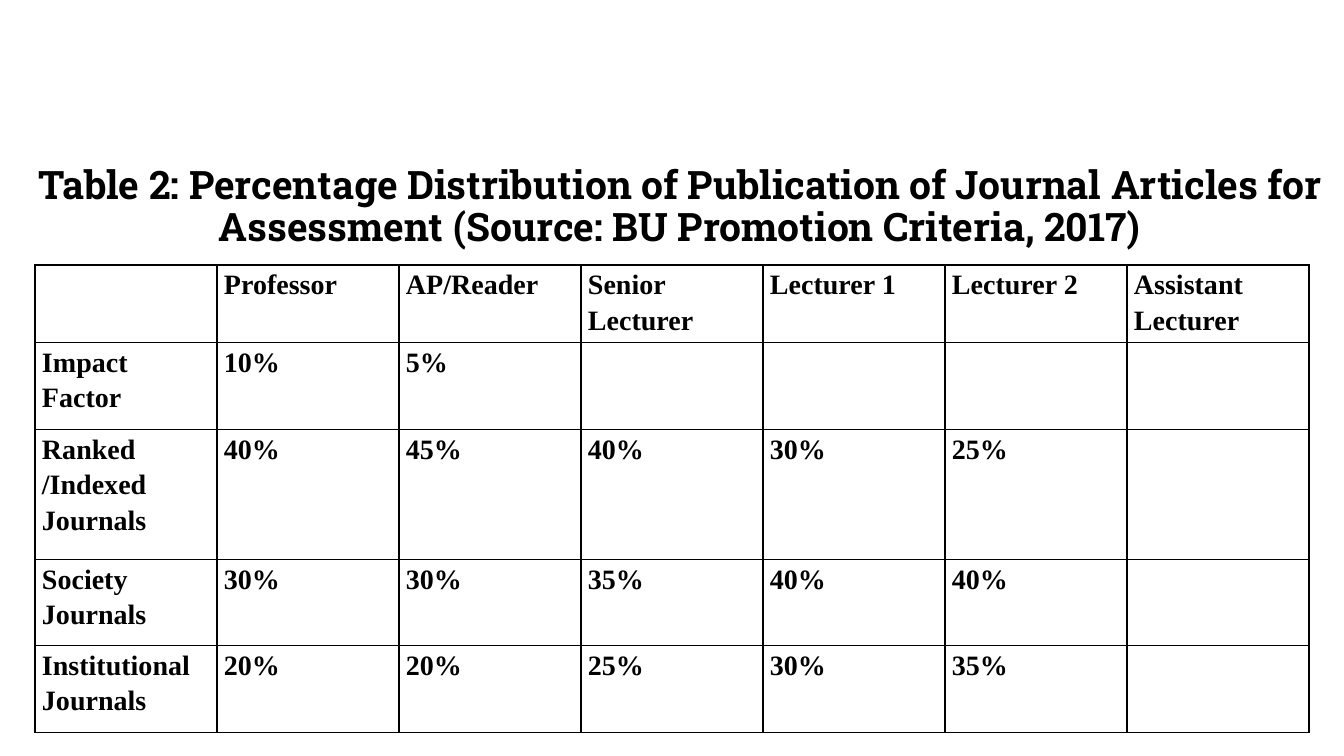
from dataclasses import dataclass

import pptx
import pptx.dml.color
import pptx.enum.text
import pptx.oxml
import pptx.oxml.ns
import pptx.util
from pptx.enum.text import MSO_ANCHOR, PP_ALIGN

EMU_PER_PX = 914400 / 100.8
BLACK = "000000"
TITLE = ("Table 2: Percentage Distribution of Publication of Journal Articles "
         "for Assessment (Source: BU Promotion Criteria, 2017)")
RANKS = ("", "Professor", "AP/Reader", "Senior Lecturer", "Lecturer 1",
         "Lecturer 2", "Assistant Lecturer")
COLUMN_WIDTH = 182


@dataclass(frozen=True)
class TableRow:
    height: int
    texts: tuple[str, ...]


ROWS = (
    TableRow(77, RANKS),
    TableRow(87, ("Impact Factor", "10%", "5%")),
    TableRow(130, ("Ranked /Indexed Journals", "40%", "45%", "40%", "30%", "25%")),
    TableRow(86, ("Society Journals", "30%", "30%", "35%", "40%", "40%")),
    TableRow(87, ("Institutional Journals", "20%", "20%", "25%", "30%", "35%")),
)


def px(length: int) -> pptx.util.Emu:
    return pptx.util.Emu(round(length * EMU_PER_PX))


def color(value: str) -> pptx.dml.color.RGBColor:
    return pptx.dml.color.RGBColor.from_string(value)


def write(paragraph, text: str, font: str, size: int, align: PP_ALIGN, spacing: float) -> None:
    paragraph.text = text
    paragraph.alignment = align
    paragraph.line_spacing = spacing
    paragraph.font.name = font
    paragraph.font.size = pptx.util.Pt(size)
    paragraph.font.bold = True
    paragraph.font.color.rgb = color(BLACK)


def add_borders(cell, value: str) -> None:
    properties = cell._tc.get_or_add_tcPr()
    for position, side in enumerate(("lnL", "lnR", "lnT", "lnB")):
        properties.insert(position, pptx.oxml.parse_xml(
            f'<a:{side} {pptx.oxml.ns.nsdecls("a")} w="{pptx.util.Pt(1)}">'
            f'<a:solidFill><a:srgbClr val="{value}"/></a:solidFill></a:{side}>'))


def add_title(page) -> None:
    box = page.shapes.add_textbox(px(15), px(165), px(1329), px(86))
    frame = box.text_frame
    frame.word_wrap = True
    frame.vertical_anchor = MSO_ANCHOR.MIDDLE
    frame.margin_top = frame.margin_bottom = 0
    write(frame.paragraphs[0], TITLE, "Roboto Slab", 28, PP_ALIGN.CENTER, 0.9)


def add_criteria_table(page) -> None:
    height = sum(row.height for row in ROWS)
    table = page.shapes.add_table(len(ROWS), len(RANKS), px(35), px(265),
                                  px(COLUMN_WIDTH * len(RANKS)), px(height)).table
    table.first_row = table.horz_banding = False
    for column in table.columns:
        column.width = px(COLUMN_WIDTH)
    for row, line in zip(ROWS, table.rows):
        line.height = px(row.height)
        for index, cell in enumerate(line.cells):
            cell.fill.background()
            add_borders(cell, BLACK)
            cell.margin_left = cell.margin_right = px(7)
            cell.margin_top = cell.margin_bottom = 0
            if index < len(row.texts) and row.texts[index]:
                write(cell.text_frame.paragraphs[0], row.texts[index],
                      "Times New Roman", 20, PP_ALIGN.JUSTIFY, 1.15)


def main() -> None:
    deck = pptx.Presentation()
    deck.slide_width, deck.slide_height = px(1344), px(756)
    page = deck.slides.add_slide(deck.slide_layouts[6])
    add_title(page)
    add_criteria_table(page)
    deck.save("out.pptx")


if __name__ == "__main__":
    main()
